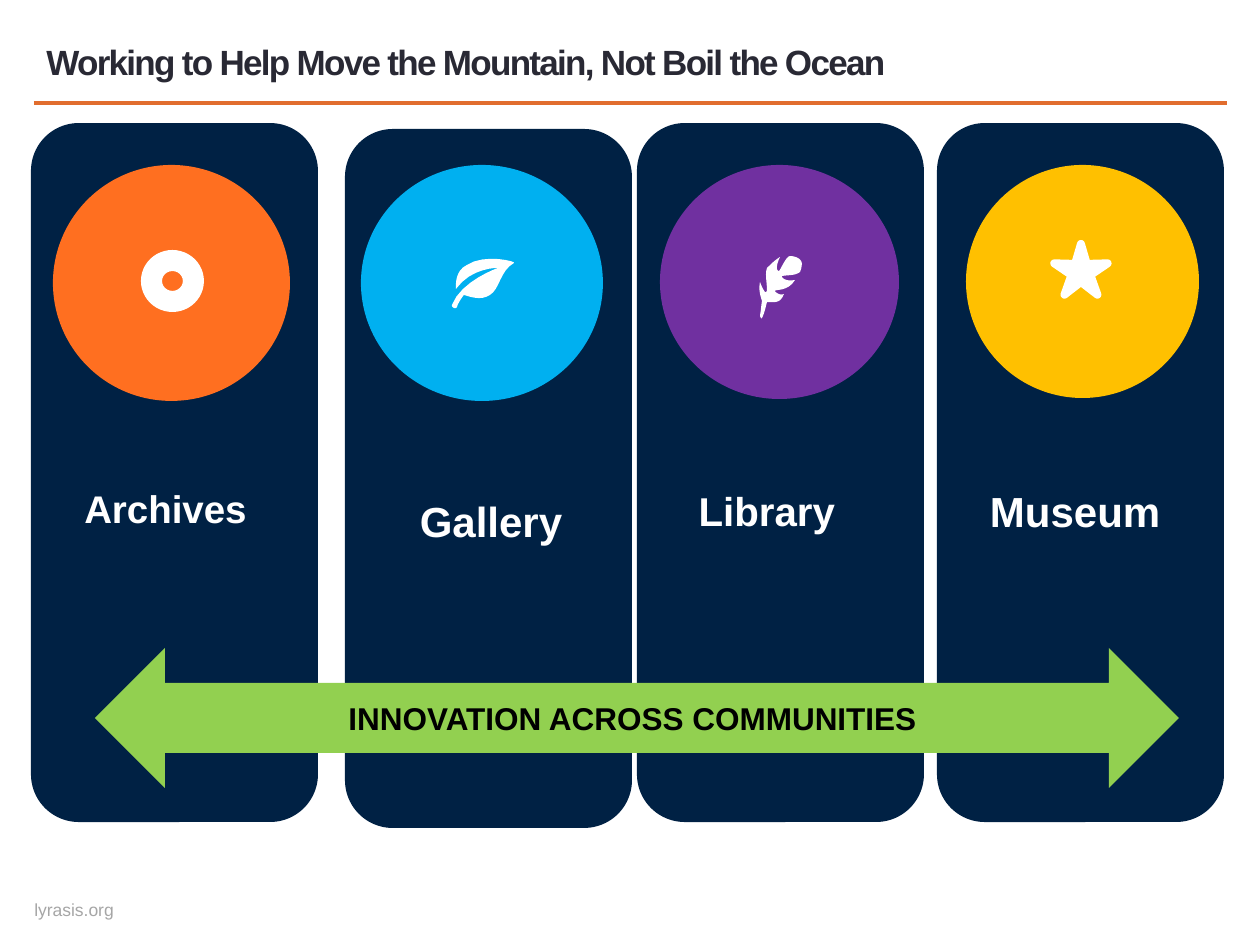
from dataclasses import dataclass
from math import cos, radians, sin

from lxml.etree import SubElement
from pptx import Presentation
from pptx.dml.color import RGBColor
from pptx.enum.shapes import MSO_CONNECTOR, MSO_SHAPE
from pptx.enum.text import MSO_ANCHOR, PP_ALIGN
from pptx.oxml.ns import qn
from pptx.util import Pt

PX = 914400 / 126


@dataclass(frozen=True)
class Theme:
    font: str = "Arial"
    navy: str = "002144"
    orange: str = "FF6F20"
    blue: str = "00B0F0"
    purple: str = "7030A0"
    gold: str = "FFC000"
    green: str = "92D050"
    rule: str = "E16D2E"
    title: str = "292934"
    footer: str = "A6A6A6"
    white: str = "FFFFFF"
    black: str = "000000"
    title_size: int = 20
    banner_size: int = 18
    footer_size: int = 10
    rule_width: float = 2.08


THEME = Theme()

COLUMNS = [
    (31, 123, THEME.orange, (53, 165, 237, 236), "Archives", 22, (40, 479, 251, 59)),
    (345, 129, THEME.blue, (361, 165, 242, 236), "Gallery", 24, (374, 489, 234, 63)),
    (637, 123, THEME.purple, (660, 165, 239, 234), "Library", 23, (633, 480, 268, 62)),
    (937, 123, THEME.gold, (966, 165, 233, 233), "Museum ", 24, (924, 479, 314, 63)),
]

LEAF = [
    (467, 265), (455, 271), (456, 284), (456, 289),
    (472, 267), (498, 268), (498, 268),
    (498, 268), (461, 281), (452, 305),
    (451, 307), (456, 310), (457, 307),
    (459, 301), (464, 295), (464, 295),
    (471, 297), (481, 301), (490, 295),
    (500, 289), (500, 271), (514, 263),
    (518, 262), (485, 253), (467, 265),
]

FEATHER = [
    (762, 318), (764, 314), (765, 310), (767, 302),
    (775, 302), (780, 304), (784, 294),
    (780, 296), (775, 292), (775, 291),
    (775, 289), (788, 292), (795, 280),
    (785, 282), (781, 277), (782, 276),
    (786, 275), (795, 276), (800, 272),
    (801, 270), (803, 263), (801, 261),
    (800, 258), (794, 256), (790, 256),
    (786, 256), (780, 271), (779, 271),
    (776, 271), (776, 265), (780, 257),
    (775, 260), (770, 265), (767, 268),
    (764, 275), (769, 292), (766, 292),
    (765, 294), (761, 285), (760, 282),
    (759, 287), (759, 292), (762, 301),
    (761, 306), (761, 311), (760, 315),
    (760, 318), (762, 319), (762, 318),
]


def emu(*lengths):
    """Turn px lengths into EMU."""
    return [round(v * PX) for v in lengths]


def polar(cx, cy, radius, angle):
    """Return the point at an angle in degrees around a centre."""
    return cx + radius * cos(radians(angle)), cy + radius * sin(radians(angle))


def curve(knots, steps=8):
    """Sample a chain of cubic Bezier segments."""
    points = [knots[0]]
    for i in range(0, len(knots) - 1, 3):
        for t in (n / steps for n in range(1, steps + 1)):
            weights = ((1 - t) ** 3, 3 * t * (1 - t) ** 2, 3 * t * t * (1 - t), t ** 3)
            points.append(tuple(sum(w * k[axis] for w, k in zip(weights, knots[i:i + 4]))
                                for axis in (0, 1)))
    return points


def rounded_star(cx, cy, outer, inner, cap):
    """Return the outline of a five-point star with rounded tips."""
    points = []
    for angle in range(-90, 270, 72):
        tip = polar(cx, cy, outer, angle)
        points += [polar(*tip, cap, angle + turn) for turn in range(-72, 73, 24)]
        points.append(polar(cx, cy, inner, angle + 36))
    return points


class SlideBuilder:
    """Draw themed elements on the current slide."""

    def __init__(self, slide, theme):
        """Keep the slide and its style."""
        self.s = slide
        self.theme = theme

    def paint(self, sp, color):
        """Give a shape a flat fill without line or shadow."""
        sp.shadow.inherit = False
        sp.fill.solid()
        sp.fill.fore_color.rgb = RGBColor.from_string(color)
        sp.line.fill.background()
        return sp

    def shape(self, kind, box, color):
        """Add a preset shape."""
        return self.paint(self.s.shapes.add_shape(kind, *emu(*box)), color)

    def outline(self, points, color):
        """Add a closed freeform."""
        first, *rest = [emu(*point) for point in points]
        builder = self.s.shapes.build_freeform(*first, scale=1.0)
        builder.add_line_segments(rest, close=True)
        return self.paint(builder.convert_to_shape(), color)

    def line(self, x1, y1, x2, y2, color, width):
        """Add a straight line."""
        ln = self.s.shapes.add_connector(MSO_CONNECTOR.STRAIGHT, *emu(x1, y1, x2, y2))
        ln.line.color.rgb = RGBColor.from_string(color)
        ln.line.width = Pt(width)
        SubElement(ln._element.spPr, qn("a:effectLst"))

    def label(self, sp, text, size, color, bold=True, align=PP_ALIGN.CENTER,
              anchor=MSO_ANCHOR.MIDDLE):
        """Set and format the text of a shape."""
        tf = sp.text_frame
        tf.text = text
        tf.word_wrap = True
        tf.vertical_anchor = anchor
        p = tf.paragraphs[0]
        p.alignment = align
        r = p.runs[0]
        r.font.name = self.theme.font
        r.font.size = Pt(size)
        r.font.bold = bold
        r.font.color.rgb = RGBColor.from_string(color)
        return r

    def text(self, box, *args, **style):
        """Add a text box and return its run."""
        return self.label(self.s.shapes.add_textbox(*emu(*box)), *args, **style)

    def footer(self, box, text):
        """Add the unwrapped footer without insets."""
        sp = self.s.shapes.add_textbox(*emu(*box))
        self.label(sp, text, self.theme.footer_size, self.theme.footer, bold=False)
        tf = sp.text_frame
        tf.word_wrap = False
        tf.margin_left = tf.margin_right = tf.margin_top = tf.margin_bottom = 0


def main():
    """Build and save the slide."""
    prs = Presentation()
    prs.slide_width, prs.slide_height = emu(1260, 945)
    s = SlideBuilder(prs.slides.add_slide(prs.slide_layouts[6]), THEME)

    s.line(34, 103, 1227, 103, THEME.rule, THEME.rule_width)
    s.footer((34, 899, 80, 21), "lyrasis.org")
    r = s.text((34, 30, 922, 63), "Working to Help Move the Mountain, Not Boil the Ocean",
               THEME.title_size, THEME.title, align=PP_ALIGN.LEFT)
    r.font._element.set("spc", "-100")

    for left, top, color, circle, name, size, box in COLUMNS:
        s.shape(MSO_SHAPE.ROUNDED_RECTANGLE, (left, top, 287, 699), THEME.navy)
        s.shape(MSO_SHAPE.OVAL, circle, color)
        s.text(box, name, size, THEME.white, anchor=MSO_ANCHOR.TOP)

    arrow = s.shape(MSO_SHAPE.LEFT_RIGHT_ARROW, (95, 648, 1084, 140), THEME.green)
    s.label(arrow, "INNOVATION ACROSS COMMUNITIES ", THEME.banner_size, THEME.black)

    disc = s.shape(MSO_SHAPE.DONUT, (141, 250, 63, 62), THEME.white)
    disc.adjustments[0] = 0.34
    for points in (curve(LEAF), curve(FEATHER), rounded_star(1081, 272, 28, 15, 4)):
        s.outline(points, THEME.white)

    prs.save("out.pptx")


if __name__ == "__main__":
    main()
